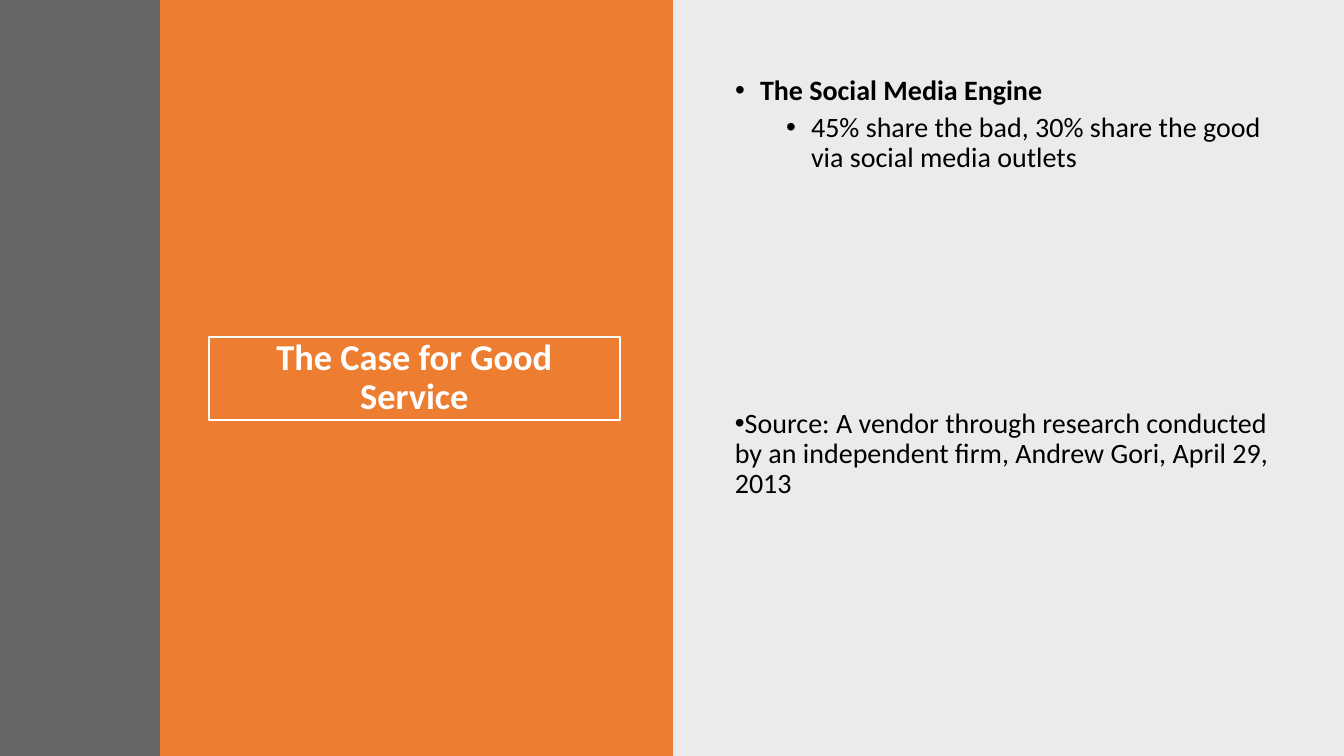
from dataclasses import dataclass

import pptx
import pptx.dml.color
import pptx.enum.shapes
import pptx.enum.text
import pptx.oxml
import pptx.oxml.ns
import pptx.util

EMU_PER_PX = 914400 / 100.8
SLIDE_W, SLIDE_H = 1344, 756


@dataclass(frozen=True)
class Theme:
    font: str = "Calibri"
    title_size: int = 26
    body_size: int = 20
    accent: str = "ED7D31"
    side: str = "404040"
    text: str = "000000"
    title: str = "FFFFFF"


THEME = Theme()


def px(n):
    return pptx.util.Emu(round(n * EMU_PER_PX))


def rgb(code):
    return pptx.dml.color.RGBColor.from_string(code)


def place(sp, box):
    sp.left, sp.top, sp.width, sp.height = map(px, box)


def style(p, size, color, bold=False):
    p.line_spacing = 0.9
    p.font.name = THEME.font
    p.font.size = pptx.util.Pt(size)
    p.font.bold = bold
    p.font.color.rgb = rgb(color)


def add_panel(s, box, color, opacity=100):
    """Add a borderless rectangle, with opacity in percent."""
    sp = s.shapes.add_shape(pptx.enum.shapes.MSO_SHAPE.RECTANGLE, *map(px, box))
    sp.shadow.inherit = False
    sp.line.fill.background()
    sp.fill.solid()
    sp.fill.fore_color.rgb = rgb(color)
    if opacity < 100:
        clr = sp.fill._xPr.find(".//" + pptx.oxml.ns.qn("a:srgbClr"))
        alpha = pptx.oxml.parse_xml(
            f'<a:alpha {pptx.oxml.ns.nsdecls("a")} val="{opacity * 1000}"/>')
        clr.append(alpha)
    return sp


def add_background(s):
    """Add the three full-height panels behind the placeholders."""
    panels = [
        add_panel(s, (672, 0, 672, SLIDE_H), THEME.text, 8),
        add_panel(s, (160, 0, 513, SLIDE_H), THEME.accent),
        add_panel(s, (0, 0, 160, SLIDE_H), THEME.side, 80),
    ]
    for i, sp in enumerate(panels):
        s.shapes._spTree.insert(2 + i, sp._element)


def fill_title(sp, box, text):
    place(sp, box)
    sp.line.color.rgb = rgb(THEME.title)
    sp.line.width = pptx.util.Pt(2)
    tf = sp.text_frame
    tf.text = text
    tf.auto_size = pptx.enum.text.MSO_AUTO_SIZE.NONE
    tf.vertical_anchor = pptx.enum.text.MSO_ANCHOR.MIDDLE
    p = tf.paragraphs[0]
    p.alignment = pptx.enum.text.PP_ALIGN.CENTER
    style(p, THEME.title_size, THEME.title, bold=True)


def fill_bullet(p, text, margin, level=0, before=0, after=0, bold=False):
    p.text = text
    p.level = level
    p.space_before = pptx.util.Pt(before)
    p.space_after = pptx.util.Pt(after)
    style(p, THEME.body_size, THEME.text, bold)
    pPr = p._p.get_or_add_pPr()
    pPr.set("marL", str(px(margin)))
    pPr.set("indent", str(px(-25)))
    ns = pptx.oxml.ns.nsdecls("a")
    defaults = pPr.find(pptx.oxml.ns.qn("a:defRPr"))
    for tag in ('buFont {} typeface="Arial"', 'buChar {} char="•"'):
        defaults.addprevious(pptx.oxml.parse_xml(f"<a:{tag.format(ns)}/>"))


def fill_points(sp, box):
    place(sp, box)
    tf = sp.text_frame
    tf.auto_size = pptx.enum.text.MSO_AUTO_SIZE.NONE
    fill_bullet(tf.paragraphs[0], "The Social Media Engine", 25,
                before=10, bold=True)
    fill_bullet(tf.add_paragraph(),
                "45% share the bad, 30% share the good via social media outlets",
                76, level=1, before=5)


def add_source_note(s, box):
    tf = s.shapes.add_textbox(*map(px, box)).text_frame
    tf.word_wrap = True
    fill_bullet(tf.paragraphs[0],
                "Source: A vendor through research conducted by an independent "
                "firm, Andrew Gori, April 29, 2013", 0, after=6)


def build_case_slide(prs):
    s = prs.slides.add_slide(prs.slide_layouts[1])
    add_background(s)
    fill_title(s.shapes.title, (209, 337, 411, 83), "The Case for Good Service")
    fill_points(s.placeholders[1], (725, 71, 557, 281))
    add_source_note(s, (725, 404, 557, 281))


def main():
    prs = pptx.Presentation()
    prs.slide_width, prs.slide_height = px(SLIDE_W), px(SLIDE_H)
    build_case_slide(prs)
    prs.save("out.pptx")


if __name__ == "__main__":
    main()
